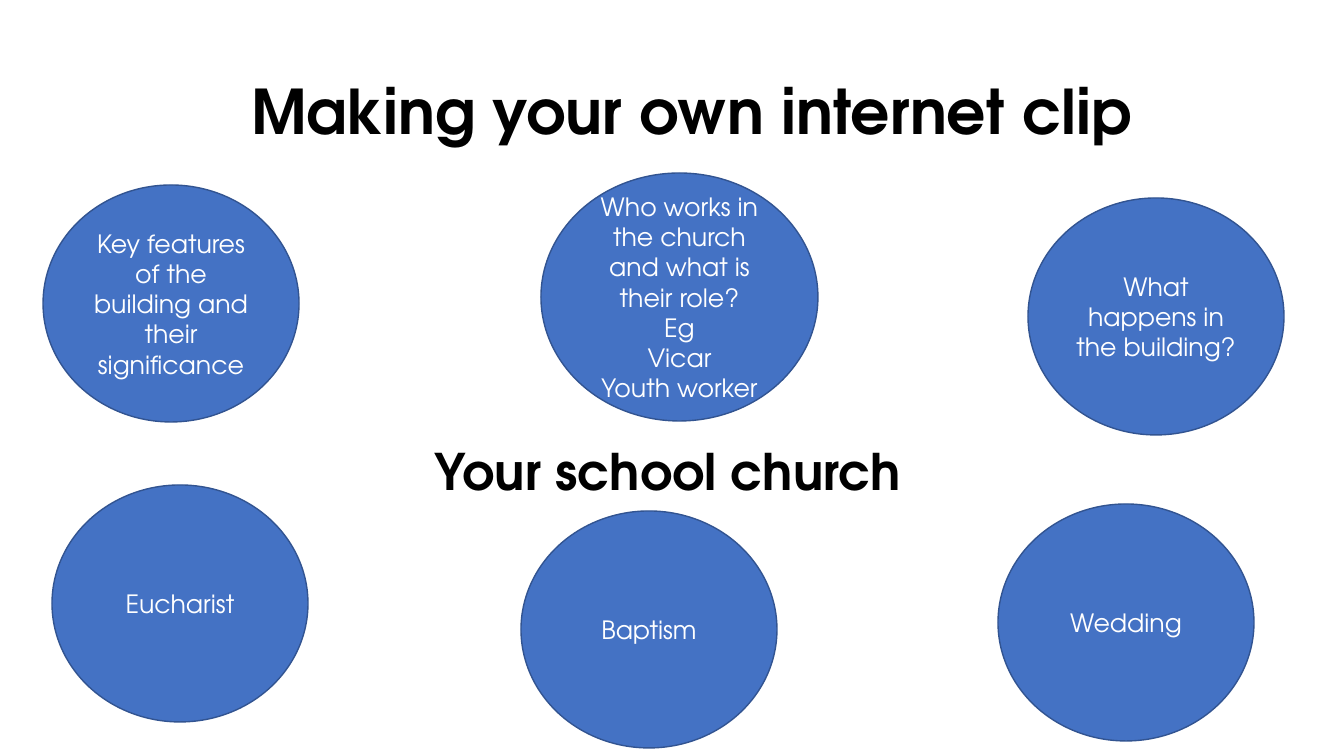
import pptx
import pptx.util
import pptx.dml.color
import pptx.enum.shapes
import pptx.enum.text
import pptx.oxml.ns
import lxml.etree

HEADS = [  # text, (left, top, width, height), point size
    ("Making your own internet clip", (90, 46, 1204, 138), 44),
    ("Your school church", (90, 436, 1156, 76), 36),
]
SIZE = (256, 237)
WIDE = (277, 248)
TOPICS = [  # text, (left, top), (width, height)
    ("Key features of the building and their significance", (43, 185), SIZE),
    ("What happens in the building?", (1028, 198), SIZE),
    ("Baptism", (521, 511), SIZE),
    ("Wedding", (998, 504), SIZE),
    ("Eucharist", (52, 485), SIZE),
    ("Who works in the church and what is their role?\nEg\nVicar\nYouth worker",
     (541, 173), WIDE),
]
COLORS = {"fill": "4472C4", "line": "325491", "head": "000000", "text": "FFFFFF"}
FONT = "TeX Gyre Adventor"
SCALE = 914400 / 100.8


def px(n):
    return pptx.util.Emu(round(n * SCALE))


def color(name):
    return pptx.dml.color.RGBColor.from_string(COLORS[name])


def write(shape, text, size, tint, bold=False):
    """Fill a shape with centred text."""
    frame = shape.text_frame
    frame.text = text
    frame.word_wrap = True
    frame.auto_size = pptx.enum.text.MSO_AUTO_SIZE.NONE
    frame.vertical_anchor = pptx.enum.text.MSO_ANCHOR.MIDDLE
    for para in frame.paragraphs:
        para.alignment = pptx.enum.text.PP_ALIGN.CENTER
        for run in para.runs:
            run.font.name = FONT
            run.font.size = pptx.util.Pt(size)
            run.font.bold = bold
            run.font.color.rgb = color(tint)


def head(shape, text, box, size):
    """Place a placeholder and set its heading without a bullet."""
    shape.left, shape.top, shape.width, shape.height = map(px, box)
    write(shape, text, size, "head", True)
    para = shape.text_frame.paragraphs[0]
    para.line_spacing = 0.9
    para.space_before = pptx.util.Pt(0)
    props = para._p.get_or_add_pPr()
    props.set("marL", "0")
    props.set("indent", "0")
    lxml.etree.SubElement(props, pptx.oxml.ns.qn("a:buNone"))


def topic(slide, text, spot, size):
    oval = slide.shapes.add_shape(
        pptx.enum.shapes.MSO_SHAPE.OVAL, *map(px, spot + size))
    oval.shadow.inherit = False
    oval.fill.solid()
    oval.fill.fore_color.rgb = color("fill")
    oval.line.color.rgb = color("line")
    oval.line.width = pptx.util.Pt(1)
    write(oval, text, 18, "text")


def main():
    deck = pptx.Presentation()
    deck.slide_width, deck.slide_height = px(1344), px(756)
    slide = deck.slides.add_slide(deck.slide_layouts[1])
    for shape, spec in zip(slide.placeholders, HEADS):
        head(shape, *spec)
    for item in TOPICS:
        topic(slide, *item)
    deck.save("out.pptx")


if __name__ == "__main__":
    main()
